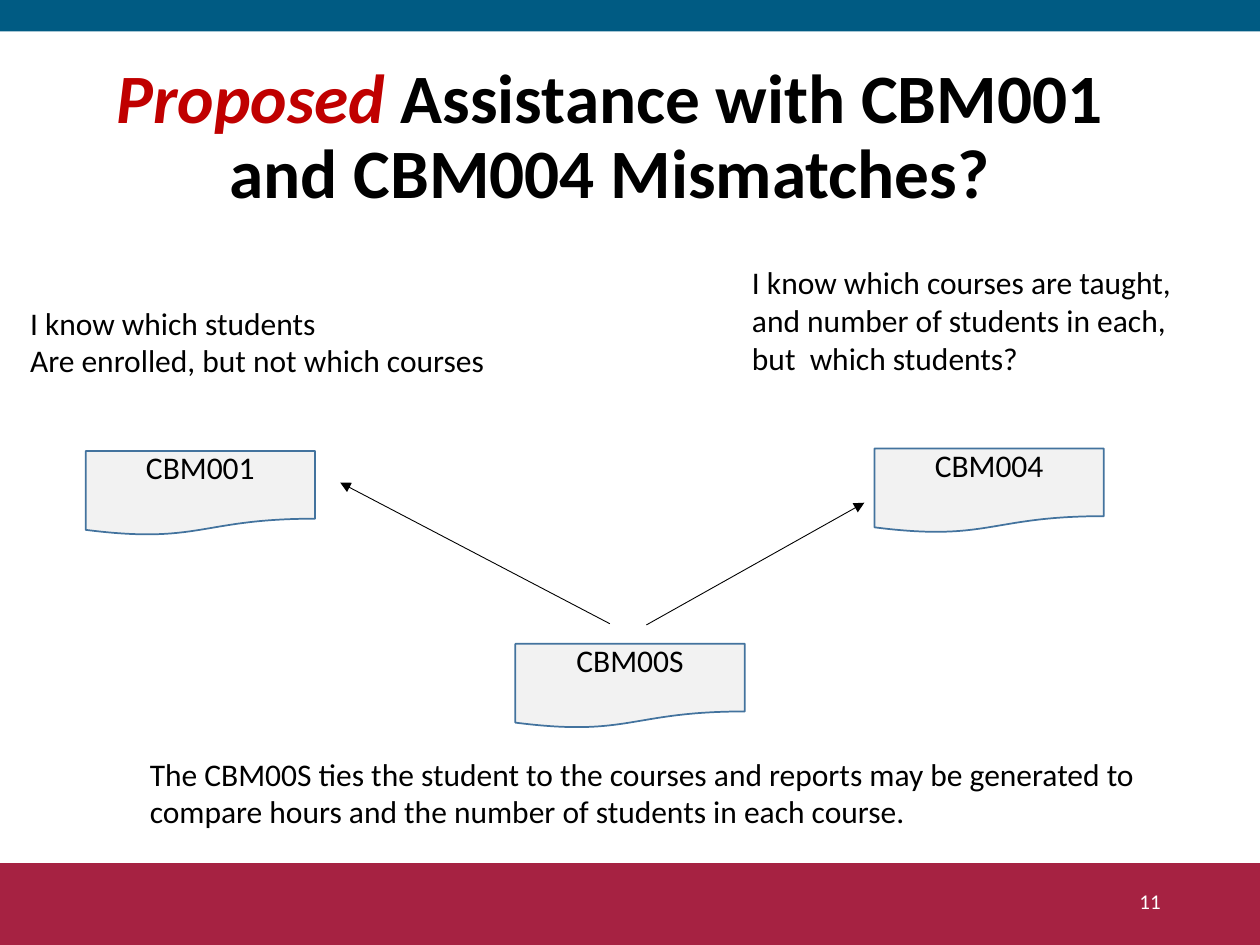
from pptx import Presentation
from pptx.dml.color import RGBColor
from pptx.enum import shapes as sh, text as tx
from pptx.oxml import ns, xmlchemy as xc
from pptx.util import Inches, Pt

BLACK = RGBColor(0, 0, 0)
WHITE = RGBColor(255, 255, 255)
RED = RGBColor(0xC0, 0, 0)
MAROON = RGBColor(0xA6, 0x22, 0x42)
TEAL = RGBColor(0, 0x5B, 0x83)
GRAY = RGBColor(0xF2, 0xF2, 0xF2)
BLUE = RGBColor(0x43, 0x73, 0x9E)
FONT = "Calibri"
LEFT, MID, RIGHT = tx.PP_ALIGN.LEFT, tx.PP_ALIGN.CENTER, tx.PP_ALIGN.RIGHT

# Content: places in inches
BANDS = [((0, 6.85, 10, 0.67), MAROON), ((0, 0, 10, 0.25), TEAL)]
TITLE = [("Proposed", RED, True),
         (" Assistance with CBM001 and CBM004 Mismatches?", BLACK, False)]
DOC_W, DOC_H = 1.82, 0.67
DOCS = [("CBM001", 0.68, 3.58), ("CBM004", 6.94, 3.56), ("CBM00S", 4.09, 5.11)]
NOTES = [
    ((0.14, 2.36, 3.85, 0.71), False,
     ["I know which students", "Are enrolled, but not which courses"]),
    ((5.87, 2.04, 3.6, 1.01), True,
     ["I know which courses are taught,",
      "and number of students in each, but  which students?"]),
    ((1.09, 5.94, 8.38, 0.71), True,
     ["The CBM00S ties the student to the courses and reports may be generated "
      "to compare hours and the number of students in each course."]),
]
ARROWS = [((5.13, 4.96), (6.86, 3.99)), ((4.84, 4.95), (2.7, 3.83))]
PAGE = ((7.06, 6.95, 2.25, 0.4), "11")


def inch(vals):
    return [Inches(v) for v in vals]


def add_run(para, words, size, color):
    run = para.add_run()
    run.text = words
    font = run.font
    font.name, font.size = FONT, Pt(size)
    font.color.rgb = color
    return font


def fill_text(frame, lines, size=18, color=BLACK, align=LEFT):
    for i, line in enumerate(lines):
        para = frame.add_paragraph() if i else frame.paragraphs[0]
        para.alignment = align
        add_run(para, line, size, color)


def add_box(slide, kind, at, fill):
    box = slide.shapes.add_shape(kind, *inch(at))
    box.shadow.inherit = False
    box.fill.solid()
    box.fill.fore_color.rgb = fill
    return box


def add_arrow(slide, start, end):
    line = slide.shapes.add_connector(
        sh.MSO_CONNECTOR.STRAIGHT, *inch(start + end))
    line.line.color.rgb = BLACK
    line.line.width = Pt(0.5)
    tail = xc.OxmlElement("a:tailEnd")
    tail.set("type", "triangle")
    props = line.line._get_or_add_ln()
    props.append(tail)
    props.getparent().append(xc.OxmlElement("a:effectLst"))


def main():
    prs = Presentation()
    prs.slide_width, prs.slide_height = Inches(10), Inches(7.5)
    slide = prs.slides.add_slide(prs.slide_layouts[5])

    # Top and bottom bands
    for at, color in BANDS:
        add_box(slide, sh.MSO_SHAPE.RECTANGLE, at, color).line.fill.background()

    # Title
    title = slide.shapes.title
    title.left, title.top, title.width, title.height = inch((0.53, 0.51, 8.62, 1.18))
    title.text_frame.vertical_anchor = tx.MSO_ANCHOR.MIDDLE
    para = title.text_frame.paragraphs[0]
    para.alignment, para.line_spacing = MID, 0.9
    for words, color, slant in TITLE:
        font = add_run(para, words, 39.6, color)
        font.bold, font.italic = True, slant

    # Report documents, label near the top edge
    for name, x, y in DOCS:
        doc = add_box(slide, sh.MSO_SHAPE.FLOWCHART_DOCUMENT,
                      (x, y, DOC_W, DOC_H), GRAY)
        doc.line.color.rgb = BLUE
        doc.line.width = Pt(1)
        frame = doc.text_frame
        frame.vertical_anchor = tx.MSO_ANCHOR.MIDDLE
        frame.margin_top, frame.margin_bottom = 0, Inches(0.28)
        fill_text(frame, [name], align=MID)

    # Notes
    for at, wrap, lines in NOTES:
        frame = slide.shapes.add_textbox(*inch(at)).text_frame
        frame.word_wrap = wrap
        frame.auto_size = tx.MSO_AUTO_SIZE.SHAPE_TO_FIT_TEXT
        fill_text(frame, lines)

    # Arrows from the linking report
    for start, end in ARROWS:
        add_arrow(slide, start, end)

    # Page number
    at, num = PAGE
    frame = slide.shapes.add_textbox(*inch(at)).text_frame
    frame.word_wrap = True
    frame.vertical_anchor = tx.MSO_ANCHOR.MIDDLE
    fill_text(frame, [num], 12, WHITE, RIGHT)

    prs.save("out.pptx")


if __name__ == "__main__":
    main()
